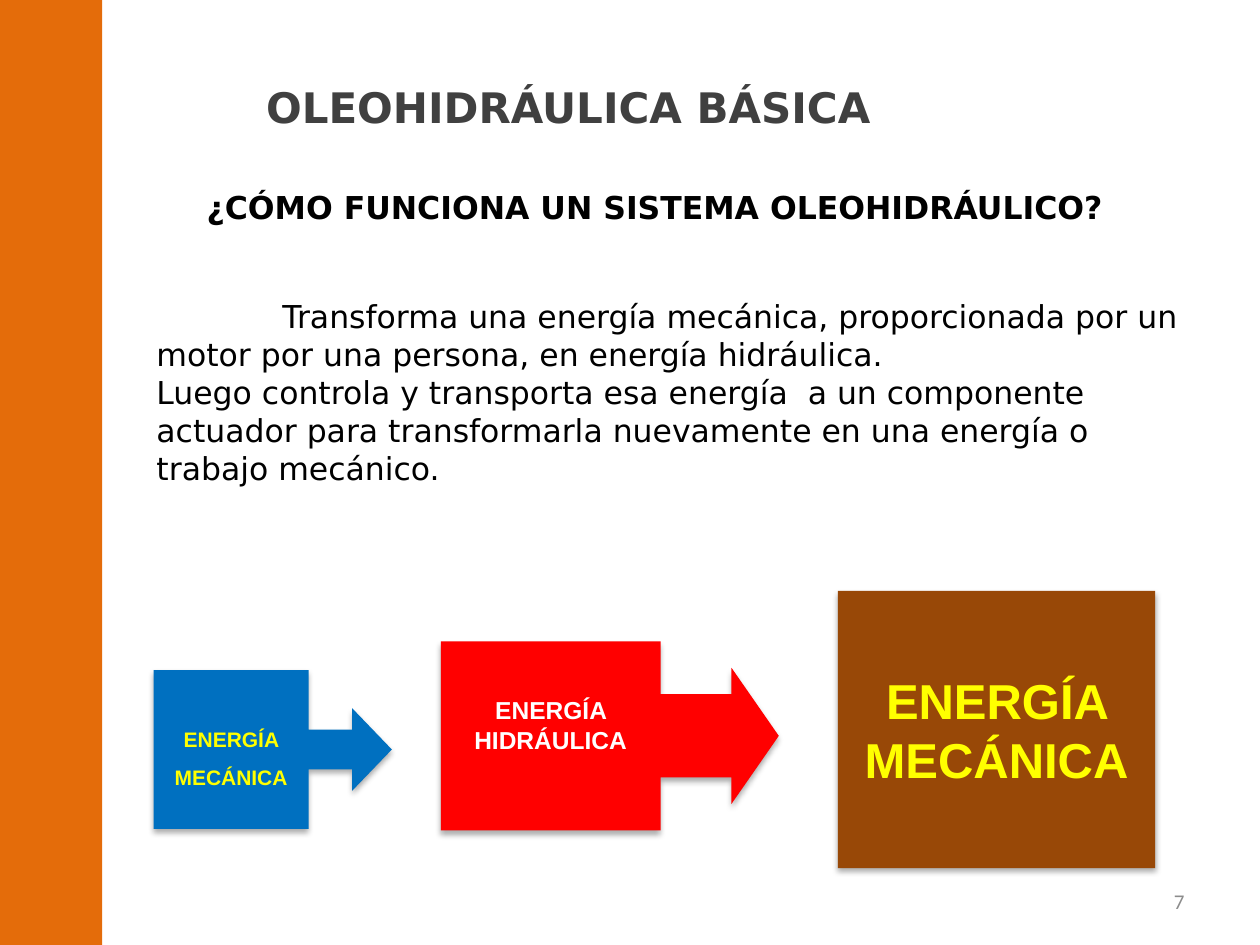
from lxml import etree
from pptx import Presentation
from pptx import util as u
from pptx.dml.color import RGBColor
from pptx.enum import shapes, text
from pptx.oxml.ns import qn

HUES = {
    "orange": "E46C0A", "blue": "0070C0", "red": "FF0000", "brown": "984807",
    "yellow": "FFFF00", "white": "FFFFFF", "black": "000000",
    "dark": "404040", "gray": "8C8C8C",
}
SANS = "DejaVu Sans"
KIND = shapes.MSO_SHAPE
ALIGN = text.PP_ALIGN
ANCHOR = text.MSO_ANCHOR

TITLE = "OLEOHIDRÁULICA BÁSICA"
ASK = "¿CÓMO FUNCIONA UN SISTEMA OLEOHIDRÁULICO?"
BODY = [  # text, first-line indent in cm
    ("Transforma una energía mecánica, proporcionada por un motor por una "
     "persona, en energía hidráulica.", 2.54),
    ("Luego controla y transporta esa energía  a un componente actuador para "
     "transformarla nuevamente en una energía o trabajo mecánico.", 0),
]
NUMBER = "7"

# Places are left, top, width, height in cm
STEPS = [
    dict(label="ENERGÍA MECÁNICA", kind=KIND.RIGHT_ARROW_CALLOUT,
         place=(3.1, 13.51, 4.8, 3.2), adj=(0.25, 0.26, 0.25, 0.65),
         fill="blue", ink="yellow", size=12, gap=1.5, inset=0.89),
    dict(label="ENERGÍA HIDRÁULICA", kind=KIND.RIGHT_ARROW_CALLOUT,
         place=(8.89, 12.93, 6.81, 3.81), adj=(0.44, 0.36, 0.25, 0.65),
         fill="red", ink="white", size=14, gap=1, inset=1.09),
    dict(label="ENERGÍA MECÁNICA", kind=KIND.RECTANGLE,
         place=(16.89, 11.91, 6.4, 5.59), adj=(),
         fill="brown", ink="yellow", size=28, gap=1, inset=None),
]


def cm(place):
    return [u.Cm(v) for v in place]


def style(para, size, hue, face=SANS, bold=False, align=ALIGN.LEFT):
    para.alignment = align
    font = para.font
    font.name, font.size, font.bold = face, u.Pt(size), bold
    font.color.rgb = RGBColor.from_string(HUES[hue])


def move(shape, place, anchor):
    shape.left, shape.top, shape.width, shape.height = cm(place)
    frame = shape.text_frame
    frame.word_wrap = True
    frame.auto_size = text.MSO_AUTO_SIZE.NONE
    frame.vertical_anchor = anchor
    return frame


def block(slide, kind, place, fill):
    shape = slide.shapes.add_shape(kind, *cm(place))
    shape.shadow.inherit = False
    shape.fill.solid()
    shape.fill.fore_color.rgb = RGBColor.from_string(HUES[fill])
    shape.line.fill.background()
    return shape


def shade(shape):
    """Put a soft black shadow just below the shape."""
    effects = shape._element.spPr.find(qn("a:effectLst"))
    outer = etree.SubElement(
        effects, qn("a:outerShdw"), blurRad=str(u.Pt(3.5)),
        dist=str(u.Pt(2.2)), dir="5400000", rotWithShape="0")
    color = etree.SubElement(outer, qn("a:srgbClr"), val=HUES["black"])
    etree.SubElement(color, qn("a:alpha"), val="32000")


def add_step(slide, step):
    shape = block(slide, step["kind"], step["place"], step["fill"])
    for i, value in enumerate(step["adj"]):
        shape.adjustments[i] = value
    shade(shape)
    frame = shape.text_frame
    frame.word_wrap = True
    frame.vertical_anchor = ANCHOR.MIDDLE
    if step["inset"]:
        frame.vertical_anchor = ANCHOR.TOP
        frame.margin_top = u.Cm(step["inset"])
    para = frame.paragraphs[0]
    para.text = step["label"]
    para.line_spacing = step["gap"]
    para.space_after = u.Pt(10)
    style(para, step["size"], step["ink"], "Arial", True, ALIGN.CENTER)


def add_body(frame):
    for i, (words, indent) in enumerate(BODY):
        para = frame.add_paragraph() if i else frame.paragraphs[0]
        para.text = words
        para.space_before = u.Pt(0)
        props = para._p.get_or_add_pPr()
        props.set("marL", "0")
        props.set("indent", str(u.Cm(indent)))
        etree.SubElement(props, qn("a:buNone"))
        style(para, 18, "black")


def add_text(slide, words, place, anchor, **look):
    frame = move(slide.shapes.add_textbox(*cm(place)), place, anchor)
    frame.text = words
    style(frame.paragraphs[0], **look)


def main():
    deck = Presentation()
    deck.slide_width, deck.slide_height = u.Cm(25.4), u.Cm(19.05)
    slide = deck.slides.add_slide(deck.slide_layouts[1])
    title, body = slide.placeholders

    block(slide, KIND.RECTANGLE, (0, 0, 2.06, 19.05), "orange")
    frame = move(title, (5.11, 1.52, 15.39, 1.27), ANCHOR.MIDDLE)
    frame.text = TITLE
    style(frame.paragraphs[0], 24, "dark", bold=True)

    add_text(slide, ASK, (3.51, 3.66, 19.38, 1.02), ANCHOR.TOP,
             size=18, hue="black", bold=True, align=ALIGN.CENTER)
    add_body(move(body, (2.9, 5.87, 21.41, 4.3), ANCHOR.TOP))
    for step in STEPS:
        add_step(slide, step)
    add_text(slide, NUMBER, (18.21, 17.65, 5.92, 1.02), ANCHOR.MIDDLE,
             size=12, hue="gray", face="Calibri", align=ALIGN.RIGHT)
    deck.save("out.pptx")


if __name__ == "__main__":
    main()
